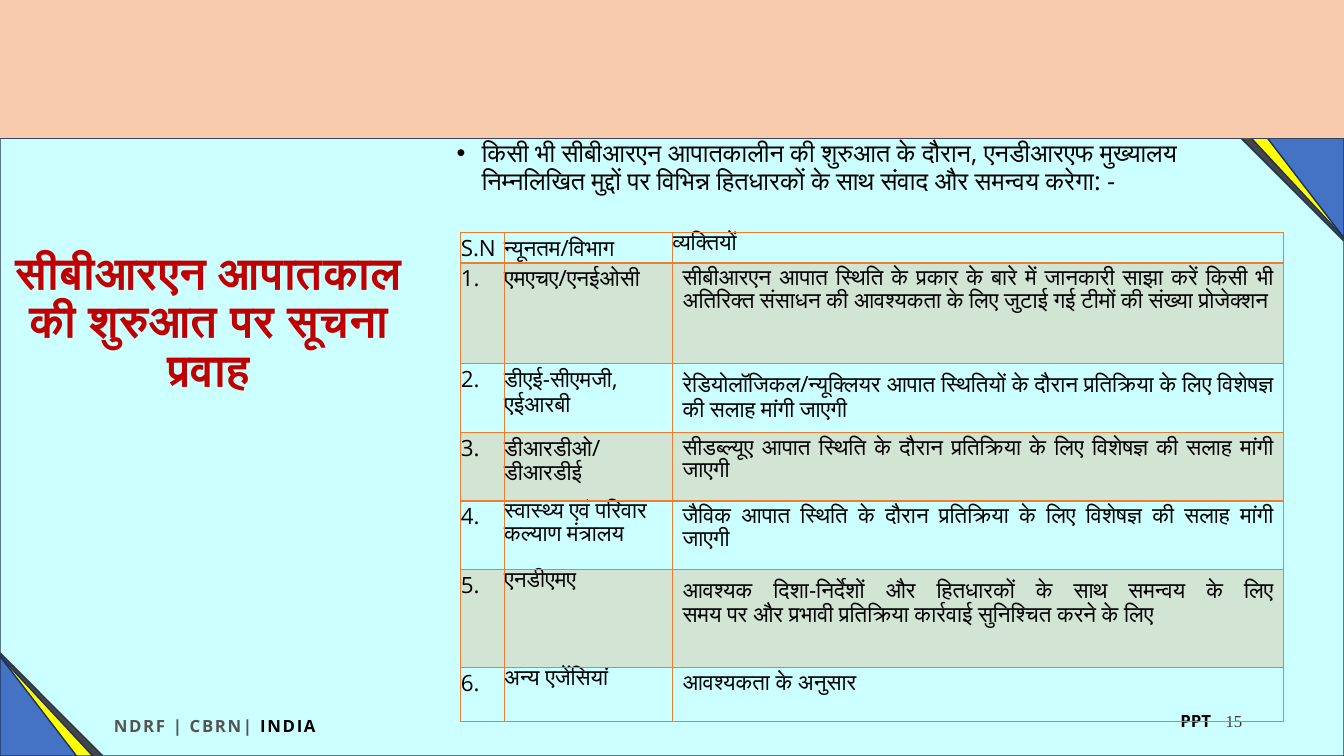
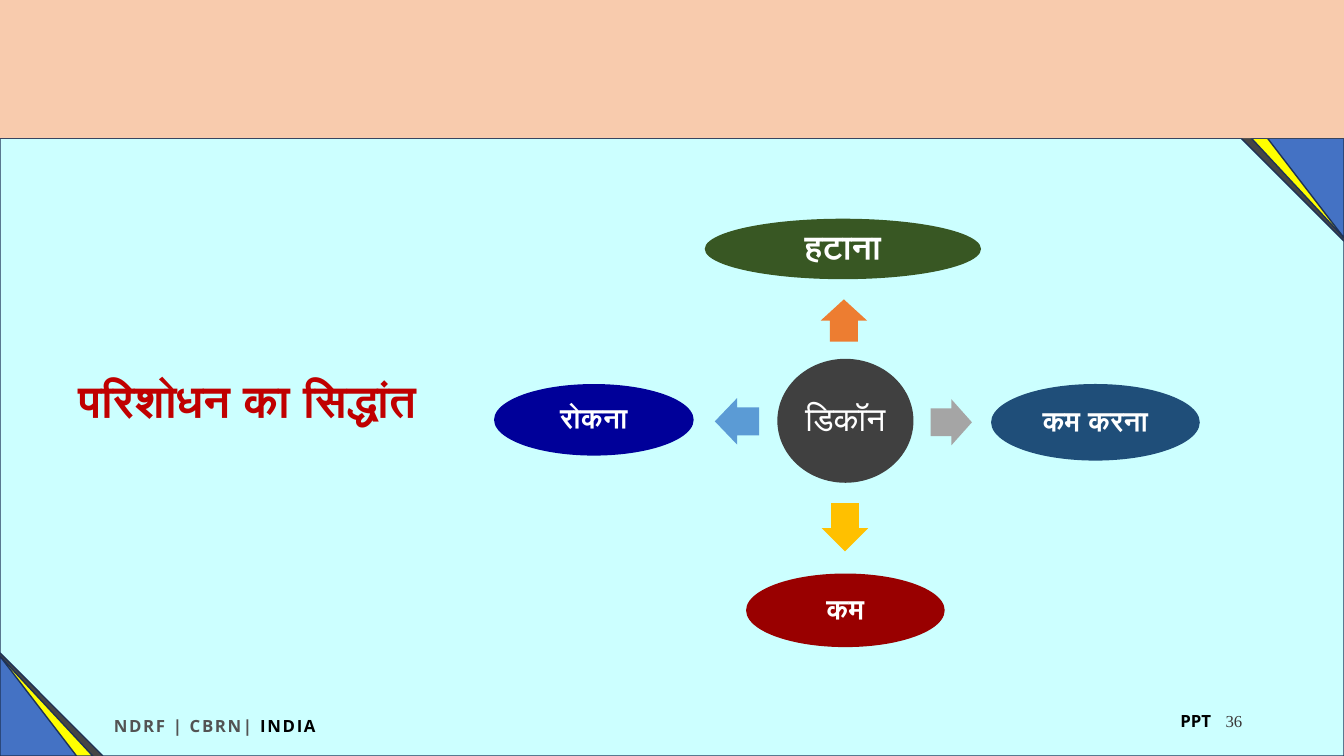
from dataclasses import dataclass

from pptx import Presentation
from pptx.dml.color import RGBColor
from pptx.enum import shapes, text
from pptx.oxml import ns, xmlchemy as xc
from pptx.util import Inches, Pt

MSO, AL, MID = shapes.MSO_SHAPE, text.PP_ALIGN, text.MSO_ANCHOR.MIDDLE


@dataclass(frozen=True)
class Theme:
    # Colours
    back: str = "454545"
    panel: str = "CCFFFF"
    band: str = "F8CBAD"
    edge: str = "1E3256"
    yellow: str = "FFFF00"
    blue: str = "4472C4"
    title: str = "C00000"
    ink: str = "000000"
    grey: str = "535353"
    number: str = "3B3838"
    white: str = "FFFFFF"
    grid: str = "ED7D31"
    # Fonts and type sizes
    sans: str = "Open Sans"
    serif: str = "Times New Roman"
    head: int = 32
    large: int = 24
    mid: int = 20
    body: int = 18
    cell: int = 16
    small: int = 12


T = Theme()
WIDE, HIGH, TOP = 13.33, 7.5, 1.37


def rgb(code):
    return RGBColor.from_string(code)


def sub(node, tag, **attrs):
    """Append a DrawingML child element."""
    child = xc.OxmlElement("a:" + tag)
    for key, value in attrs.items():
        child.set(key, str(value))
    node.append(child)
    return child


class Deck:
    def __init__(self):
        self.prs = Presentation()
        self.prs.slide_width, self.prs.slide_height = Inches(WIDE), Inches(HIGH)
        self.slide = None

    # Slide with the shared frame
    def new(self, num):
        self.slide = self.prs.slides.add_slide(self.prs.slide_layouts[6])
        fill = self.slide.background.fill
        fill.solid()
        fill.fore_color.rgb = rgb(T.back)
        for right in (False, True):
            for wide, color in ((0.92, T.yellow), (0.76, T.blue)):
                box = ((WIDE - wide, TOP) if right else (0, HIGH - 0.99)) + (wide, 0.99)
                self.shape(MSO.RIGHT_TRIANGLE, box, color, T.edge, 180 * right)
        self.shape(MSO.SNIP_2_DIAG_RECTANGLE, (0, TOP, WIDE, HIGH - TOP), T.panel, T.edge)
        self.shape(MSO.RECTANGLE, (0, 0, WIDE, TOP), T.band)
        brand = self.box((0, 7.01, 4.26, 0.37), 0.09)
        para = self.para(brand, AL.CENTER)
        for words, color in (("NDRF | CBRN| ", T.grey), ("INDIA", T.ink)):
            run = self.run(para, words, T.small, color, bold=True)
            run.font._element.set("spc", "120")
        mark = self.box((11.61, 7, 0.94, 0.3))
        self.run(self.para(mark), "PPT", T.small, T.ink, bold=True)
        page = self.box((9.42, 6.95, 3, 0.4))
        page.vertical_anchor = MID
        self.run(self.para(page, AL.RIGHT), num, T.small, T.number, T.serif)

    # Preset shape
    def shape(self, kind, box, color, line=None, turn=0):
        form = self.slide.shapes.add_shape(kind, *map(Inches, box))
        form.shadow.inherit = False
        form.rotation = turn
        form.fill.solid()
        form.fill.fore_color.rgb = rgb(color)
        if line:
            form.line.color.rgb = rgb(line)
            form.line.width = Pt(1)
        else:
            form.line.fill.background()
        return form

    # Text frame, paragraph and run
    def box(self, box, pad=None):
        frame = self.slide.shapes.add_textbox(*map(Inches, box)).text_frame
        frame.word_wrap = True
        if pad is not None:
            self.pad(frame, pad)
        return frame

    def pad(self, item, size):
        item.margin_left = item.margin_right = Inches(size)
        item.margin_top = item.margin_bottom = Inches(size)

    def para(self, frame, align=AL.LEFT, space=None):
        para = frame.paragraphs[0]
        para.alignment = align
        if space:
            para.line_spacing = space
        return para

    def run(self, para, words, size, color, face=T.sans, bold=False):
        run = para.add_run()
        run.text = words
        font = run.font
        font.size, font.name, font.bold = Pt(size), face, bold
        font.color.rgb = rgb(color)
        return run

    def title(self, words, box):
        frame = self.box(box)
        frame.vertical_anchor = MID
        self.run(self.para(frame, AL.CENTER, 0.9), words, T.head, T.title, bold=True)

    def bullet(self, words, box):
        para = self.para(self.box(box), space=0.9)
        props = para._p.get_or_add_pPr()
        props.set("marL", str(Inches(0.25)))
        props.set("indent", str(-Inches(0.25)))
        sub(props, "buFont", typeface="Arial")
        sub(props, "buChar", char="•")
        self.run(para, words, T.body, T.ink)

    # Table
    def table(self, rows, spot, cols, highs):
        area = (*spot, sum(cols), sum(highs))
        grid = self.slide.shapes.add_table(len(rows), len(cols), *map(Inches, area)).table
        grid.first_row = grid.horz_banding = False
        for col, wide in zip(grid.columns, cols):
            col.width = Inches(wide)
        for row, (line, high) in enumerate(zip(rows, highs)):
            grid.rows[row].height = Inches(high)
            for col, words in enumerate(line):
                self.cell(grid.cell(row, col), words, row, col)

    def cell(self, cell, words, row, col):
        note = row > 0 and col == 2
        if not note:
            self.pad(cell, 0)
        para = self.para(cell.text_frame, AL.JUSTIFY if note else AL.LEFT)
        for i, part in enumerate(words.split("\n")):
            if i:
                para.add_line_break()
            self.run(para, part, T.cell, T.ink)
        props = cell._tc.get_or_add_tcPr()
        for side in "LRTB":
            thick = 2 if (row, side) in ((0, "B"), (1, "T")) else 1
            edge = sub(props, "ln" + side, w=Pt(thick))
            sub(sub(edge, "solidFill"), "srgbClr", val=T.grid)
        if row % 2:
            cell.fill.solid()
            cell.fill.fore_color.rgb = rgb(T.grid)
            tint = props.find(ns.qn("a:solidFill")).find(ns.qn("a:srgbClr"))
            sub(tint, "alpha", val=20000)
        else:
            cell.fill.background()

    # Diagram parts
    def node(self, words, box, color, size, bold=True):
        frame = self.shape(MSO.OVAL, box, color).text_frame
        frame.word_wrap = True
        frame.vertical_anchor = MID
        self.pad(frame, 0.03)
        self.run(self.para(frame, AL.CENTER, 0.9), words, size, T.white, T.serif, bold)

    def arrow(self, box, color, turn):
        form = self.shape(MSO.RIGHT_ARROW, box, color, turn=turn)
        form.adjustments[0], form.adjustments[1] = 0.6, 0.5


def flow(deck):
    deck.new("15")
    deck.title("सीबीआरएन आपातकाल की शुरुआत पर सूचना प्रवाह", (0, 2.48, 4.14, 1.45))
    deck.bullet("किसी भी सीबीआरएन आपातकालीन की शुरुआत के दौरान, एनडीआरएफ मुख्यालय "
                "निम्नलिखित मुद्दों पर विभिन्न हितधारकों के साथ संवाद और समन्वय करेगा: -",
                (4.43, 1.35, 7.98, 1.01))
    rows = [
        ("S.N", "न्यूनतम/विभाग", "व्यक्तियों"),
        ("1.", "एमएचए/एनईओसी",
         "सीबीआरएन आपात स्थिति के प्रकार के बारे में जानकारी साझा करें किसी भी "
         "अतिरिक्त संसाधन की आवश्यकता के लिए जुटाई गई टीमों की संख्या प्रोजेक्शन"),
        ("2.", "डीएई-सीएमजी, एईआरबी",
         "रेडियोलॉजिकल/न्यूक्लियर आपात स्थितियों के दौरान प्रतिक्रिया के लिए "
         "विशेषज्ञ की सलाह मांगी जाएगी"),
        ("3.", "डीआरडीओ/डीआरडीई",
         "सीडब्ल्यूए आपात स्थिति के दौरान प्रतिक्रिया के लिए विशेषज्ञ की सलाह मांगी जाएगी"),
        ("4.", "स्वास्थ्य एवं परिवार कल्याण मंत्रालय",
         "जैविक आपात स्थिति के दौरान प्रतिक्रिया के लिए विशेषज्ञ की सलाह मांगी जाएगी"),
        ("5.", "एनडीएमए",
         "आवश्यक दिशा-निर्देशों और हितधारकों के साथ समन्वय के लिए\n"
         "समय पर और प्रभावी प्रतिक्रिया कार्रवाई सुनिश्चित करने के लिए"),
        ("6.", "अन्य एजेंसियां", "आवश्यकता के अनुसार"),
    ]
    deck.table(rows, (4.57, 2.31), (0.43, 1.67, 6.06),
               (0.3, 1, 0.68, 0.68, 0.68, 0.97, 0.54))


def decon(deck):
    deck.new("36")
    deck.title("परिशोधन का सिद्धांत", (-0.13, 3.27, 5.17, 1.45))
    deck.node("डिकॉन", (7.71, 3.56, 1.35, 1.23), "404040", T.large, False)
    arms = [
        ("हटाना", (6.99, 2.17, 2.74, 0.6), "385723", T.large,
         (8.16, 2.95, 0.42, 0.46), "ED7D31", 270),
        ("कम करना", (9.83, 3.81, 2.07, 0.76), "1F4E79", T.mid,
         (9.23, 3.96, 0.41, 0.46), "A5A5A5", 0),
        ("कम", (7.4, 5.69, 1.97, 0.73), "990000", T.mid,
         (8.14, 5, 0.48, 0.46), "FFC000", 90),
        ("रोकना", (4.9, 3.81, 1.98, 0.71), "000099", T.mid,
         (7.09, 3.95, 0.44, 0.46), "5B9BD5", 180),
    ]
    for words, oval, color, size, spot, tint, turn in arms:
        deck.arrow(spot, tint, turn)
        deck.node(words, oval, color, size)


def main():
    deck = Deck()
    flow(deck)
    decon(deck)
    deck.prs.save("out.pptx")


if __name__ == "__main__":
    main()
